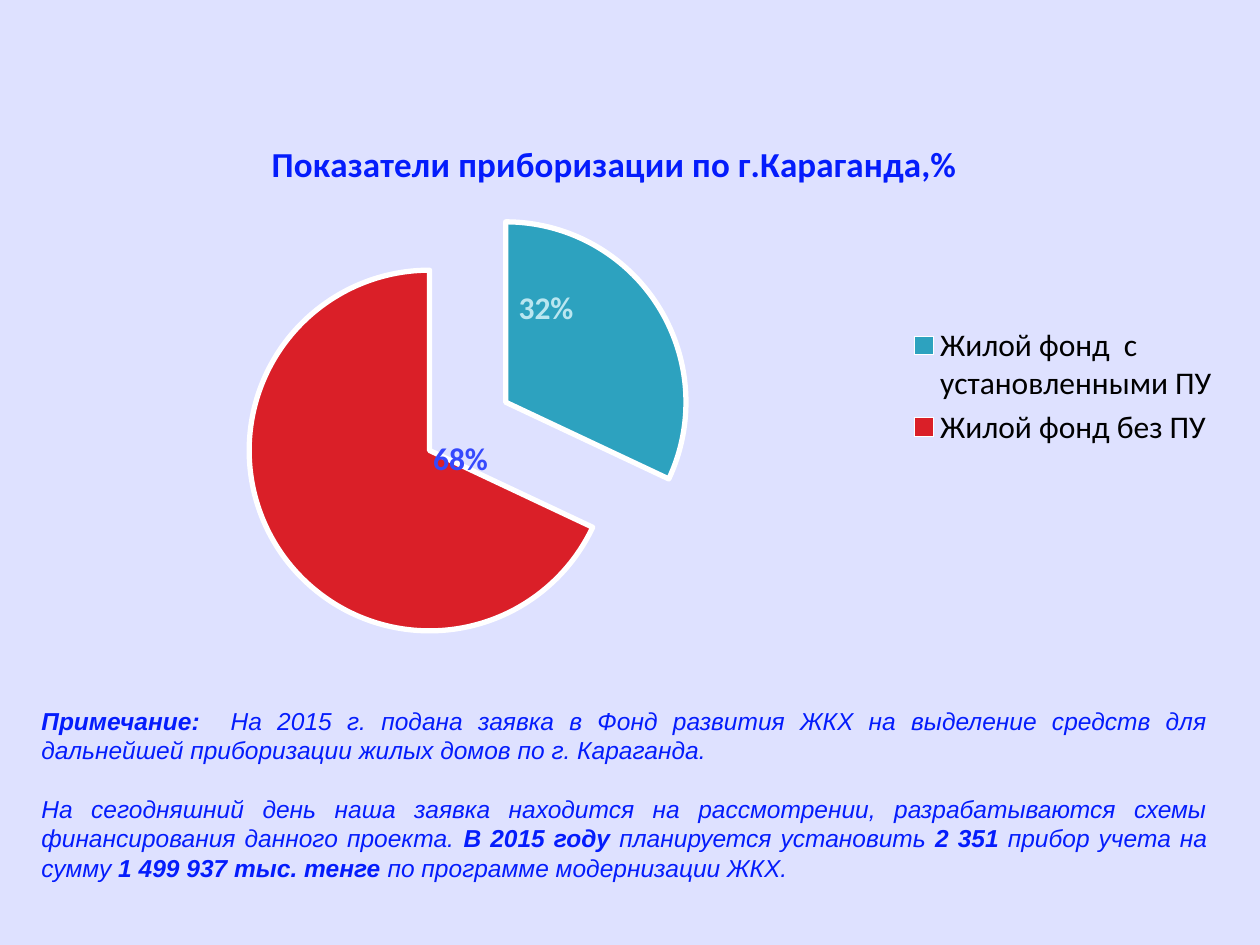
from typing import NamedTuple

from lxml.etree import SubElement
from pptx import Presentation
from pptx.chart.chart import Chart
from pptx.chart.data import CategoryChartData
from pptx.dml.color import RGBColor
from pptx.enum.chart import XL_CHART_TYPE, XL_LABEL_POSITION, XL_LEGEND_POSITION
from pptx.enum.text import MSO_AUTO_SIZE, PP_ALIGN
from pptx.oxml import parse_xml
from pptx.oxml.ns import nsdecls, qn
from pptx.slide import Slide
from pptx.util import Inches, Pt

BACKGROUND = RGBColor(0xDE, 0xE1, 0xFF)
BLUE = RGBColor(0x04, 0x1C, 0xFC)
LABEL_BLUE = RGBColor(0x36, 0x49, 0xFD)
PALE_TEAL = RGBColor(0xBA, 0xE6, 0xF0)
TEAL = RGBColor(0x2D, 0xA2, 0xBF)
RED = RGBColor(0xDA, 0x1F, 0x28)
WHITE = RGBColor(0xFF, 0xFF, 0xFF)
BLACK = RGBColor(0, 0, 0)

CHART_TITLE = "Показатели приборизации по г.Караганда,%"


class Slice(NamedTuple):
    name: str
    value: int
    fill: RGBColor
    label_color: RGBColor
    label_shift: tuple[float, float]


class Run(NamedTuple):
    text: str
    bold: bool = False


SLICES = [
    Slice("Жилой фонд  с установленными ПУ", 32, TEAL, PALE_TEAL, (-0.03, -0.08)),
    Slice("Жилой фонд без ПУ", 68, RED, LABEL_BLUE, (0.09, -0.07)),
]

NOTE = [
    [
        Run("Примечание:  ", bold=True),
        Run("На 2015 г. подана заявка в Фонд развития ЖКХ на выделение средств "
            "для дальнейшей приборизации жилых домов по г. Караганда."),
    ],
    [
        Run("На сегодняшний день наша заявка находится на рассмотрении, "
            "разрабатываются схемы финансирования данного проекта. "),
        Run("В 2015 году ", bold=True),
        Run("планируется установить "),
        Run("2 351", bold=True),
        Run(" прибор учета на сумму "),
        Run("1 499 937 тыс. тенге ", bold=True),
        Run("по программе модернизации ЖКХ."),
    ],
]


def make_layout(mode: str = "edge", **fractions: float):
    """Return a c:layout element; fractions are shares of the chart's size."""
    layout = parse_xml(f"<c:layout {nsdecls('c')}><c:manualLayout/></c:layout>")
    settings = {"xMode": mode, "yMode": mode} if mode == "edge" else {}
    for tag, value in (settings | fractions).items():
        SubElement(layout[0], qn(f"c:{tag}")).set("val", str(value))
    return layout


def replace_layout(parent, previous_tag: str, layout) -> None:
    """Put the layout after the named child, in place of any present one."""
    for present in parent.findall(qn("c:layout")):
        parent.remove(present)
    parent.find(qn(previous_tag)).addnext(layout)


def format_title(chart: Chart) -> None:
    chart.has_title = True
    title = chart.chart_title
    title.include_in_layout = False
    paragraph = title.text_frame.paragraphs[0]
    paragraph.text = CHART_TITLE
    paragraph.font.name = "Calibri"
    paragraph.font.size = Pt(20)
    paragraph.font.bold = True
    paragraph.font.color.rgb = BLUE
    replace_layout(title._element, "c:tx", make_layout(x=0.19, y=0.06))


def format_legend(chart: Chart) -> None:
    chart.has_legend = True
    legend = chart.legend
    legend.position = XL_LEGEND_POSITION.RIGHT
    legend.include_in_layout = False
    replace_layout(legend._element, "c:legendPos",
                   make_layout(x=0.73, y=0.39, w=0.26, h=0.23))


def format_slices(chart: Chart) -> None:
    series = chart.plots[0].series[0]
    series.format.line.color.rgb = WHITE
    explosion = parse_xml(f'<c:explosion {nsdecls("c")} val="25"/>')
    series._element.find(qn("c:spPr")).addnext(explosion)
    for index, item in enumerate(SLICES):
        point = series.points[index]
        point.format.fill.solid()
        point.format.fill.fore_color.rgb = item.fill
        point.format.line.color.rgb = WHITE
        point.format.line.width = Pt(3)

        label = point.data_label
        label.font.name = "Calibri"
        label.font.size = Pt(18)
        label.font.bold = True
        label.font.color.rgb = item.label_color
        label.position = XL_LABEL_POSITION.CENTER
    label_elements = series._element.findall(f".//{qn('c:dLbl')}")
    for element, item in zip(label_elements, SLICES):
        element.find(qn("c:showVal")).set("val", "0")
        element.find(qn("c:showPercent")).set("val", "1")
        shift_x, shift_y = item.label_shift
        replace_layout(element, "c:idx",
                       make_layout("factor", x=shift_x, y=shift_y))


def add_pie(slide: Slide) -> None:
    data = CategoryChartData()
    data.categories = [item.name for item in SLICES]
    data.add_series(CHART_TITLE, [item.value for item in SLICES])
    chart = slide.shapes.add_chart(
        XL_CHART_TYPE.PIE, Inches(0.31), Inches(0.78), Inches(9.45), Inches(4.53), data
    ).chart
    chart.font.name = "Calibri"
    chart.font.size = Pt(18)
    chart.font.color.rgb = BLACK
    chart.plots[0].vary_by_categories = True
    format_title(chart)
    format_legend(chart)
    format_slices(chart)

    plot_area = chart._chartSpace.chart.plotArea
    for present in plot_area.findall(qn("c:layout")):
        plot_area.remove(present)
    layout = make_layout(x=0.17, y=0.18, w=0.38, h=0.79)
    layout[0].insert(0, parse_xml(f'<c:layoutTarget {nsdecls("c")} val="inner"/>'))
    plot_area.insert(0, layout)


def add_note(slide: Slide) -> None:
    box = slide.shapes.add_textbox(Inches(0.23), Inches(5.55), Inches(9.45), Inches(1.75))
    frame = box.text_frame
    frame.word_wrap = True
    frame.auto_size = MSO_AUTO_SIZE.SHAPE_TO_FIT_TEXT
    for index, runs in enumerate(NOTE):
        paragraph = frame.add_paragraph() if index else frame.paragraphs[0]
        paragraph.alignment = PP_ALIGN.JUSTIFY
        if index:
            paragraph.space_before = Pt(16.8)
        paragraph.font.name = "Arial"
        paragraph.font.size = Pt(14)
        paragraph.font.italic = True
        paragraph.font.color.rgb = BLUE
        for item in runs:
            run = paragraph.add_run()
            run.text = item.text
            run.font.bold = item.bold


def main() -> None:
    presentation = Presentation()
    presentation.slide_width = Inches(10)
    presentation.slide_height = Inches(7.5)
    slide = presentation.slides.add_slide(presentation.slide_layouts[6])
    slide.background.fill.solid()
    slide.background.fill.fore_color.rgb = BACKGROUND
    add_note(slide)
    add_pie(slide)
    presentation.save("out.pptx")


if __name__ == "__main__":
    main()
